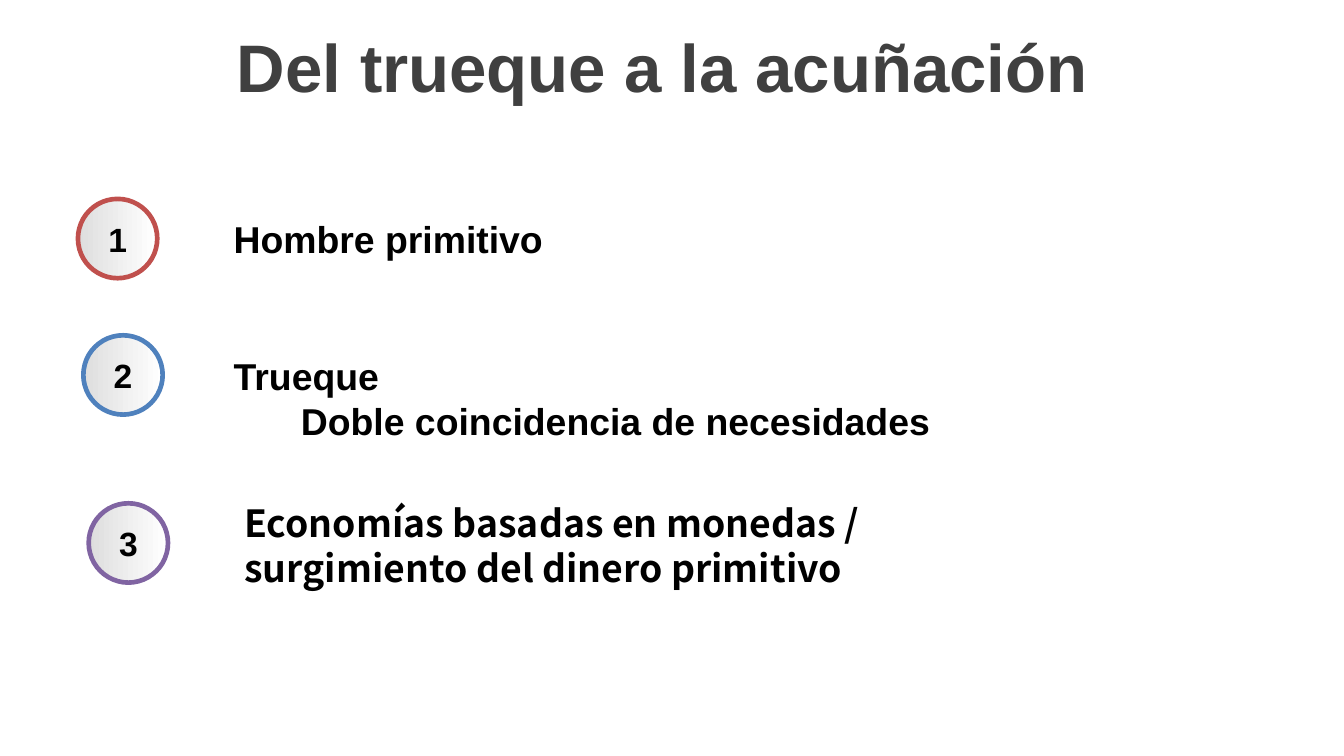
from dataclasses import dataclass

from pptx import Presentation
from pptx.dml.color import RGBColor as RGB
from pptx.enum.shapes import MSO_SHAPE as Shape
from pptx.enum.text import MSO_ANCHOR as Anchor, MSO_AUTO_SIZE as Fit, PP_ALIGN as Align
from pptx.util import Pt

PX = 4572  # 200 px to the inch
WIDTH, HEIGHT = 2000, 1125


@dataclass(frozen=True)
class Theme:
    title: str = "404040"
    text: str = "000000"
    shade: str = "DEDEDE"
    light: str = "FFFFFF"
    red: str = "C0504D"
    blue: str = "4F81BD"
    purple: str = "8064A2"
    latin: str = "Arial"
    asian: str = "Noto Sans CJK KR"
    title_size: int = 36
    item_size: int = 20
    badge_size: int = 18
    leading: int = 24
    ring: float = 2.5


T = Theme()


def emu(*lengths):
    return [n * PX for n in lengths]


def write(tf, lines, size, color=T.text, font=T.latin, align=Align.LEFT,
          anchor=Anchor.TOP, leading=None):
    """Fill a text frame with one bold paragraph per line."""
    frame = {"word_wrap": True, "auto_size": Fit.NONE, "vertical_anchor": anchor}
    for name, value in frame.items():
        setattr(tf, name, value)
    for i, line in enumerate(lines):
        p = tf.add_paragraph() if i else tf.paragraphs[0]
        p.alignment = align
        if leading:
            p.line_spacing = Pt(leading)
        r = p.add_run()
        r.text = line
        for name, value in {"name": font, "size": Pt(size), "bold": True}.items():
            setattr(r.font, name, value)
        r.font.color.rgb = RGB.from_string(color)


def add_title(s, box, text):
    sp = s.shapes.title
    sp.left, sp.top, sp.width, sp.height = emu(*box)
    write(sp.text_frame, [text], T.title_size, T.title,
          align=Align.CENTER, anchor=Anchor.MIDDLE)


def add_badge(s, left, top, number, color, side=118, inset=20):
    """Ringed circle with its number centred inside."""
    group = s.shapes.add_group_shape()
    sp = group.shapes.add_shape(Shape.OVAL, *emu(left, top, side, side))
    sp.shadow.inherit = False
    sp.fill.gradient()
    sp.fill.gradient_angle = 0
    for stop, shade in zip(sp.fill.gradient_stops, (T.shade, T.light)):
        stop.color.rgb = RGB.from_string(shade)
    sp.line.color.rgb = RGB.from_string(color)
    sp.line.width = Pt(T.ring)

    inner = side - 2 * inset
    label = group.shapes.add_textbox(*emu(left + inset, top + inset, inner, inner))
    tf = label.text_frame
    for margin in ("margin_left", "margin_top", "margin_right", "margin_bottom"):
        setattr(tf, margin, 0)
    write(tf, [str(number)], T.badge_size, align=Align.CENTER, anchor=Anchor.MIDDLE)


def add_item(s, box, lines, font):
    sp = s.shapes.add_textbox(*emu(*box))
    write(sp.text_frame, lines, T.item_size, font=font, leading=T.leading)


def main():
    prs = Presentation()
    prs.slide_width, prs.slide_height = emu(WIDTH, HEIGHT)
    s = prs.slides.add_slide(prs.slide_layouts[5])

    add_title(s, (0, 0, WIDTH, 194), "Del trueque a la acuñación ")

    # Numbered stages: badge top, ring colour, text box, lines, font
    stages = [
        (296, T.red, (328, 312, 766, 88), ["Hombre primitivo"], T.latin),
        (499, T.blue, (328, 516, 1204, 154),
         ["Trueque", "\tDoble coincidencia de necesidades"], T.latin),
        (749, T.purple, (344, 734, 1110, 356),
         ["Economías basadas en monedas /", "surgimiento del dinero primitivo"], T.asian),
    ]
    for i, (top, color, box, lines, font) in enumerate(stages):
        add_badge(s, 116 + 8 * i, top, i + 1, color)
        add_item(s, box, lines, font)

    prs.save("out.pptx")


if __name__ == "__main__":
    main()
